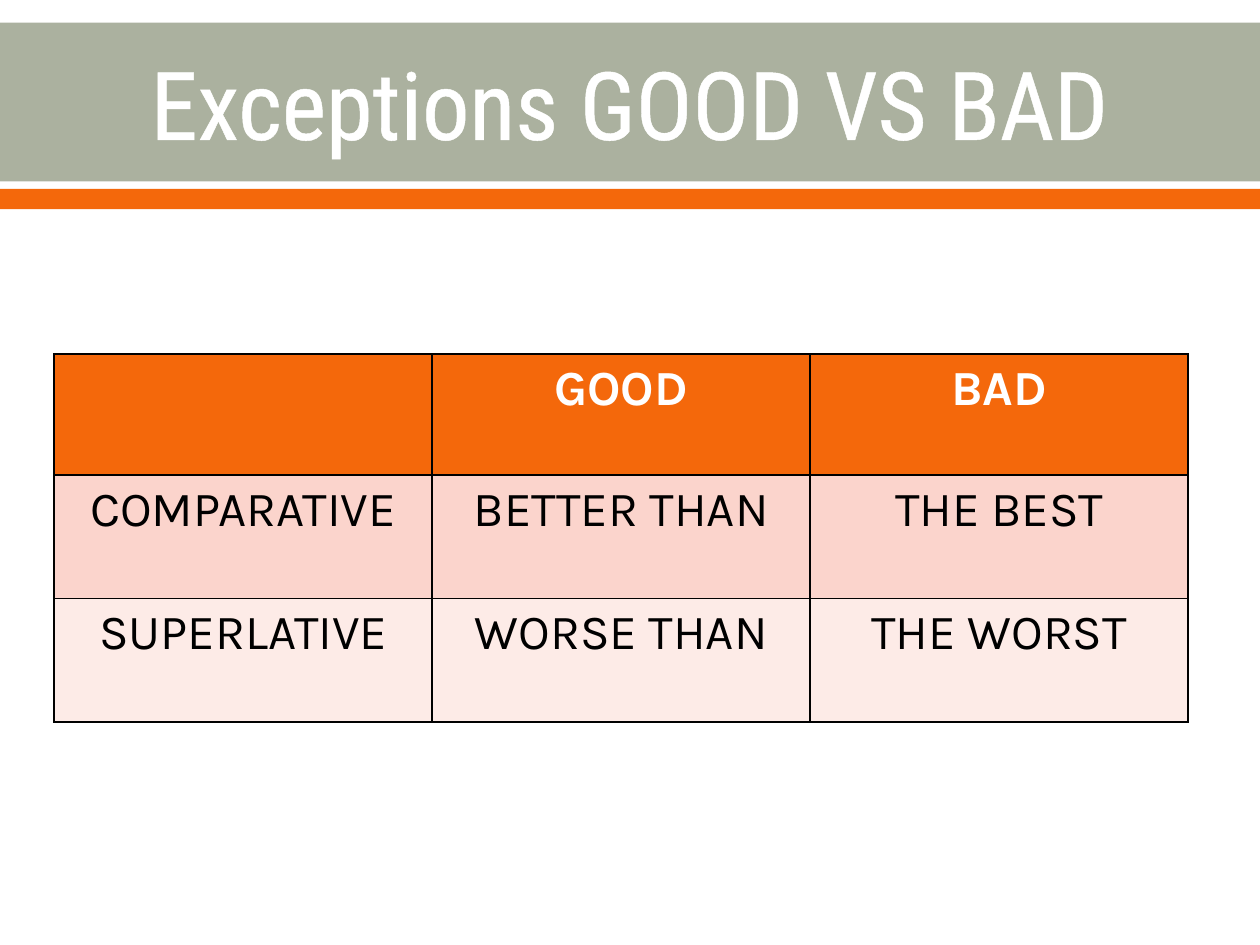
"""Build the slide on the exceptions good and bad."""
from lxml import etree
from pptx import Presentation
from pptx.dml.color import RGBColor
from pptx.enum.shapes import MSO_SHAPE
from pptx.enum.text import MSO_ANCHOR, PP_ALIGN
from pptx.oxml.ns import qn
from pptx.util import Inches, Pt

RECT = MSO_SHAPE.RECTANGLE
MIDDLE = MSO_ANCHOR.MIDDLE
CENTER = PP_ALIGN.CENTER


def write(frame, text, **look):
    par = frame.paragraphs[0]
    par.alignment = CENTER
    run = par.add_run()
    run.text = text
    run.font.color.rgb = RGBColor.from_string(look.pop("color"))
    for name, value in look.items():
        setattr(run.font, name, value)
    return run


def add_line(owner, tag, place, color, width):
    line = etree.Element(qn(tag), w=str(Pt(width)))
    fill = etree.SubElement(line, qn("a:solidFill"))
    etree.SubElement(fill, qn("a:srgbClr"), val=color)
    owner.insert(place, line)


deck = Presentation()
deck.slide_width, deck.slide_height = Inches(10), Inches(7.5)
wide = deck.slide_width
slide = deck.slides.add_slide(deck.slide_layouts[6])

for top, high, color in ((0.18, 1.26, "ABB19F"), (1.5, 0.16, "F4680B")):
    band = slide.shapes.add_shape(RECT, 0, Inches(top), wide, Inches(high))
    band.shadow.inherit = False
    band.fill.solid()
    band.fill.fore_color.rgb = RGBColor.from_string(color)
    band.line.fill.background()

title = slide.shapes.add_textbox(
    wide * 5 // 100, Inches(0.2), wide * 9 // 10, Inches(1.22))
frame = title.text_frame
frame.word_wrap = True
frame.vertical_anchor = MIDDLE
run = write(frame, "Exceptions GOOD VS BAD", color="FFFFFF",
            size=Pt(54), name="Roboto Condensed")
add_line(run.font.fill and run._r.get_or_add_rPr(), "a:ln", 0, "FFFFFF", 1.1)

rows = (
    ("", "GOOD", "BAD"),
    ("COMPARATIVE", "BETTER THAN", "THE BEST"),
    ("SUPERLATIVE", "WORSE THAN", "THE WORST"),
)
styles = (
    (0.96, "F4680B", "FFFFFF", True),
    (0.98, "FBD4CC", "000000", False),
    (0.98, "FDEBE7", "000000", False),
)
grid = slide.shapes.add_table(
    3, 3, Inches(0.43), Inches(2.81), wide * 9 // 10, Inches(2.92)).table
for row, words, (high, back, ink, bold) in zip(grid.rows, rows, styles):
    row.height = Inches(high)
    for cell, word in zip(row.cells, words):
        cell.fill.solid()
        cell.fill.fore_color.rgb = RGBColor.from_string(back)
        for place, side in enumerate("LRTB"):
            add_line(cell._tc.get_or_add_tcPr(), "a:ln" + side, place, "000000", 1)
        if word:
            write(cell.text_frame, word, color=ink,
                  size=Pt(28), name="Karla", bold=bold)

deck.save("out.pptx")
